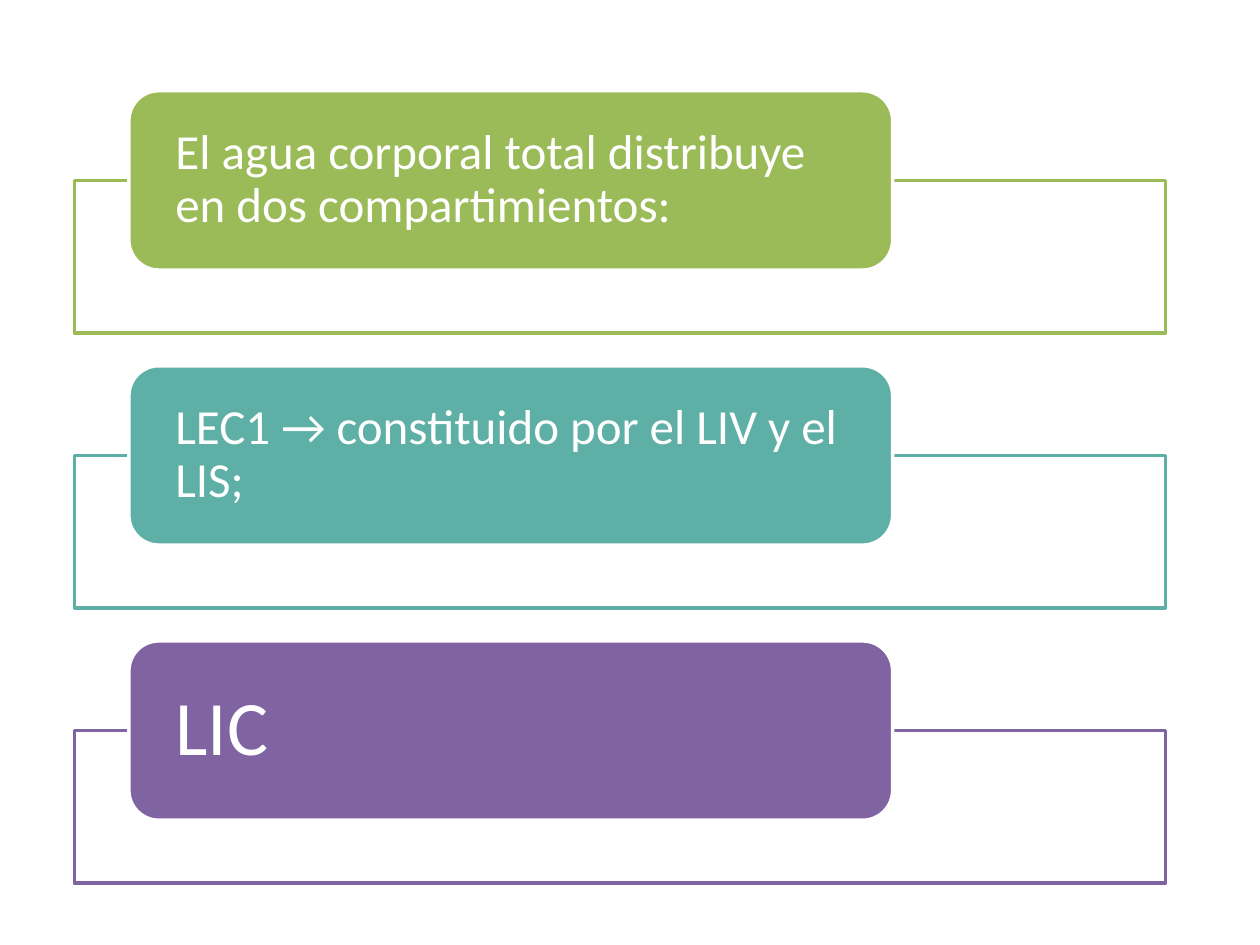
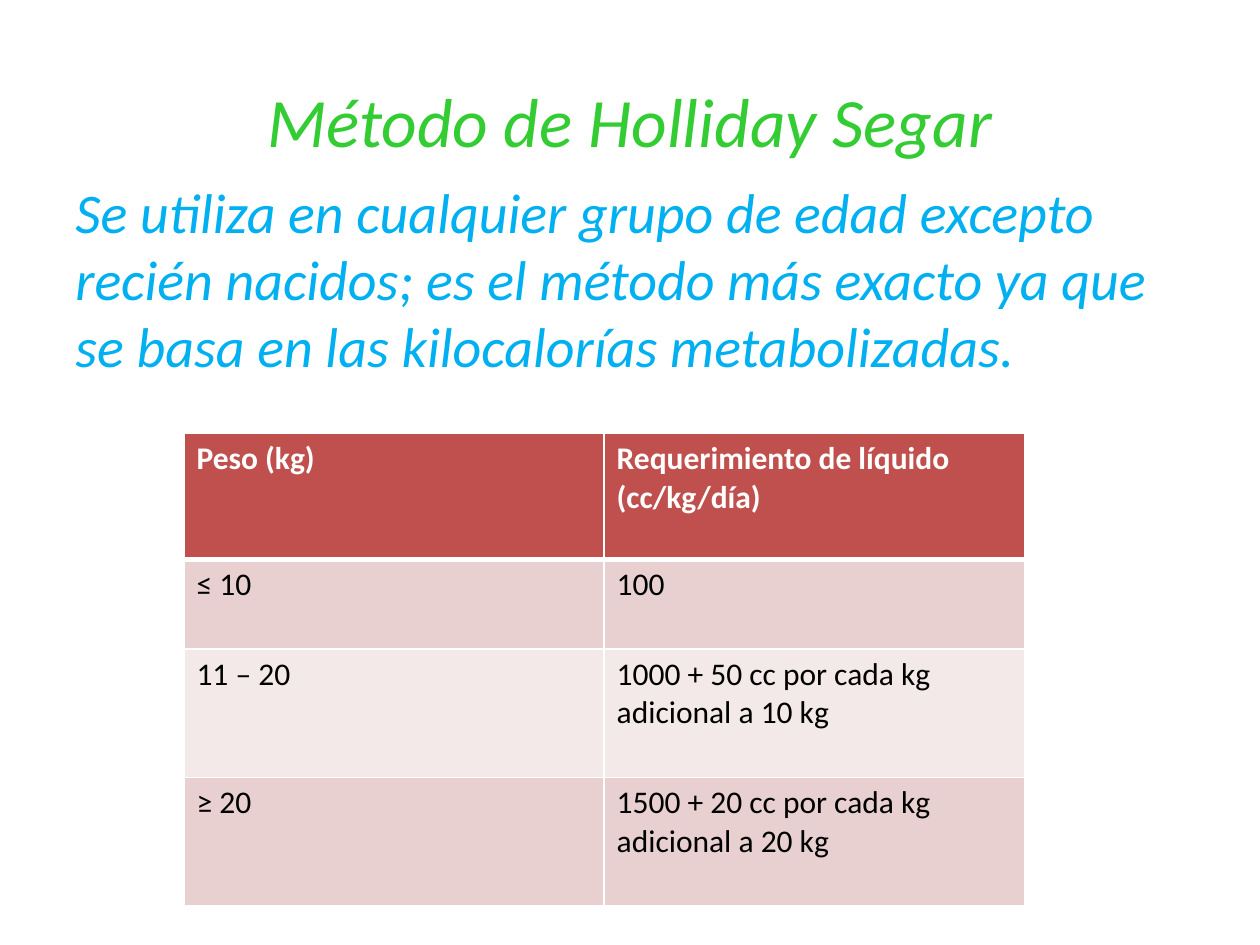
from pptx import Presentation
from pptx.dml.color import RGBColor
from pptx.enum.shapes import MSO_SHAPE
from pptx.enum.text import MSO_ANCHOR, PP_ALIGN
from pptx.oxml.ns import qn
from pptx.util import Inches, Pt
from lxml.etree import SubElement

FONT = "Calibri"
WHITE = RGBColor(0xFF, 0xFF, 0xFF)
BLACK = RGBColor(0x00, 0x00, 0x00)
OLIVE = RGBColor(0x9B, 0xBB, 0x59)
TEAL = RGBColor(0x5E, 0xAF, 0xA6)
PURPLE = RGBColor(0x80, 0x64, 0xA2)
GREEN = RGBColor(0x33, 0xCC, 0x33)
SKY = RGBColor(0x00, 0xB0, 0xF0)
RED = RGBColor(0xC0, 0x50, 0x4D)
ROSE = RGBColor(0xE8, 0xD0, 0xD0)
PALE_ROSE = RGBColor(0xF4, 0xE9, 0xE9)

SLIDE_WIDTH, SLIDE_HEIGHT = 10, 7.5
COMPARTMENTS = [
    ("El agua corporal total distribuye en dos compartimientos:", 28, OLIVE),
    ("LEC1 → constituido por el LIV y el LIS;", 28, TEAL),
    ("LIC", 44, PURPLE),
]
REQUIREMENTS = [
    ("Peso (kg)", "Requerimiento de líquido (cc/kg/día)"),
    ("≤ 10", "100"),
    ("11 – 20", "1000 + 50 cc por cada kg adicional a 10 kg"),
    ("≥ 20", "1500 + 20 cc por cada kg adicional a 20 kg"),
]
ROW_HEIGHTS = [1.0, 0.71, 1.02, 1.02]


def write(frame, text, size, color, align=PP_ALIGN.LEFT, spacing=1.0, **style):
    frame.word_wrap = True
    paragraph = frame.paragraphs[0]
    paragraph.alignment = align
    paragraph.line_spacing = spacing
    run = paragraph.add_run()
    run.text = text
    for name, value in {"name": FONT, "size": Pt(size), **style}.items():
        setattr(run.font, name, value)
    run.font.color.rgb = color


def add_panel(slide, kind, box, fill, line):
    panel = slide.shapes.add_shape(kind, *map(Inches, box))
    panel.shadow.inherit = False
    panel.fill.solid()
    panel.fill.fore_color.rgb = fill
    panel.line.color.rgb = line
    panel.line.width = Pt(2)
    return panel


def add_compartment(slide, box, text, size, color):
    """A label over the upper edge of an outlined frame."""
    left, top, width, height = box
    frame_top = 0.37 * height
    add_panel(slide, MSO_SHAPE.RECTANGLE,
              (left, top + frame_top, width, height - frame_top), WHITE, color)
    label = add_panel(slide, MSO_SHAPE.ROUNDED_RECTANGLE,
                      (left + 0.05 * width, top, 0.7 * width, 0.74 * height), color, WHITE)
    margins = {"margin_left": 0.3, "margin_right": 0.3, "margin_top": 0.07, "margin_bottom": 0.07}
    for name, inset in margins.items():
        setattr(label.text_frame, name, Inches(inset))
    label.text_frame.vertical_anchor = MSO_ANCHOR.MIDDLE
    write(label.text_frame, text, size, WHITE, spacing=0.9)


def build_compartments(slide, box):
    left, top, width, height = box
    gap = 0.26
    band = (height - gap * (len(COMPARTMENTS) - 1)) / len(COMPARTMENTS)
    for index, compartment in enumerate(COMPARTMENTS):
        add_compartment(slide, (left, top + index * (band + gap), width, band), *compartment)


def add_heading(slide, box, text, size, color, anchor, align):
    frame = slide.shapes.add_textbox(*map(Inches, box)).text_frame
    frame.vertical_anchor = anchor
    write(frame, text, size, color, align, italic=True)


def set_borders(cell, widths):
    """White borders; widths in points by side, in schema order."""
    properties = cell._tc.get_or_add_tcPr()
    for side, width in widths.items():
        border = SubElement(properties, qn(f"a:ln{side}"), w=str(Pt(width)))
        SubElement(SubElement(border, qn("a:solidFill")), qn("a:srgbClr"), val=str(WHITE))


def add_requirements(slide, box):
    table = slide.shapes.add_table(len(REQUIREMENTS), len(REQUIREMENTS[0]),
                                   *map(Inches, box)).table
    for row, height in zip(table.rows, ROW_HEIGHTS):
        row.height = Inches(height)
    for row_index, texts in enumerate(REQUIREMENTS):
        header = row_index == 0
        fill = RED if header else (PALE_ROSE, ROSE)[row_index % 2]
        for column, text in enumerate(texts):
            cell = table.cell(row_index, column)
            set_borders(cell, {"L": 1, "R": 1, "T": 3 if row_index == 1 else 1,
                               "B": 3 if header else 1})
            cell.fill.solid()
            cell.fill.fore_color.rgb = fill
            write(cell.text_frame, text, 18, WHITE if header else BLACK, bold=header)


def build_method(slide, box):
    left, top, width, height = box
    add_heading(slide, (left, top, width, 0.18 * height), "Método de Holliday Segar",
                39.6, GREEN, MSO_ANCHOR.MIDDLE, PP_ALIGN.CENTER)
    add_heading(slide, (left, top + 0.15 * height, width, 0.27 * height),
                "Se utiliza en cualquier grupo de edad excepto recién nacidos; es el método "
                "más exacto ya que se basa en las kilocalorías metabolizadas.",
                32, SKY, MSO_ANCHOR.TOP, PP_ALIGN.LEFT)
    table_height = sum(ROW_HEIGHTS)
    add_requirements(slide, (left + 0.96, top + height - table_height, 6.67, table_height))


def main():
    deck = Presentation()
    deck.slide_width, deck.slide_height = Inches(SLIDE_WIDTH), Inches(SLIDE_HEIGHT)
    blank = deck.slide_layouts[6]
    build_compartments(deck.slides.add_slide(blank), (0.59, 0.72, 8.66, 6.29))
    build_method(deck.slides.add_slide(blank), (0.5, 0.33, 9, 6.86))
    deck.save("out.pptx")


if __name__ == "__main__":
    main()
